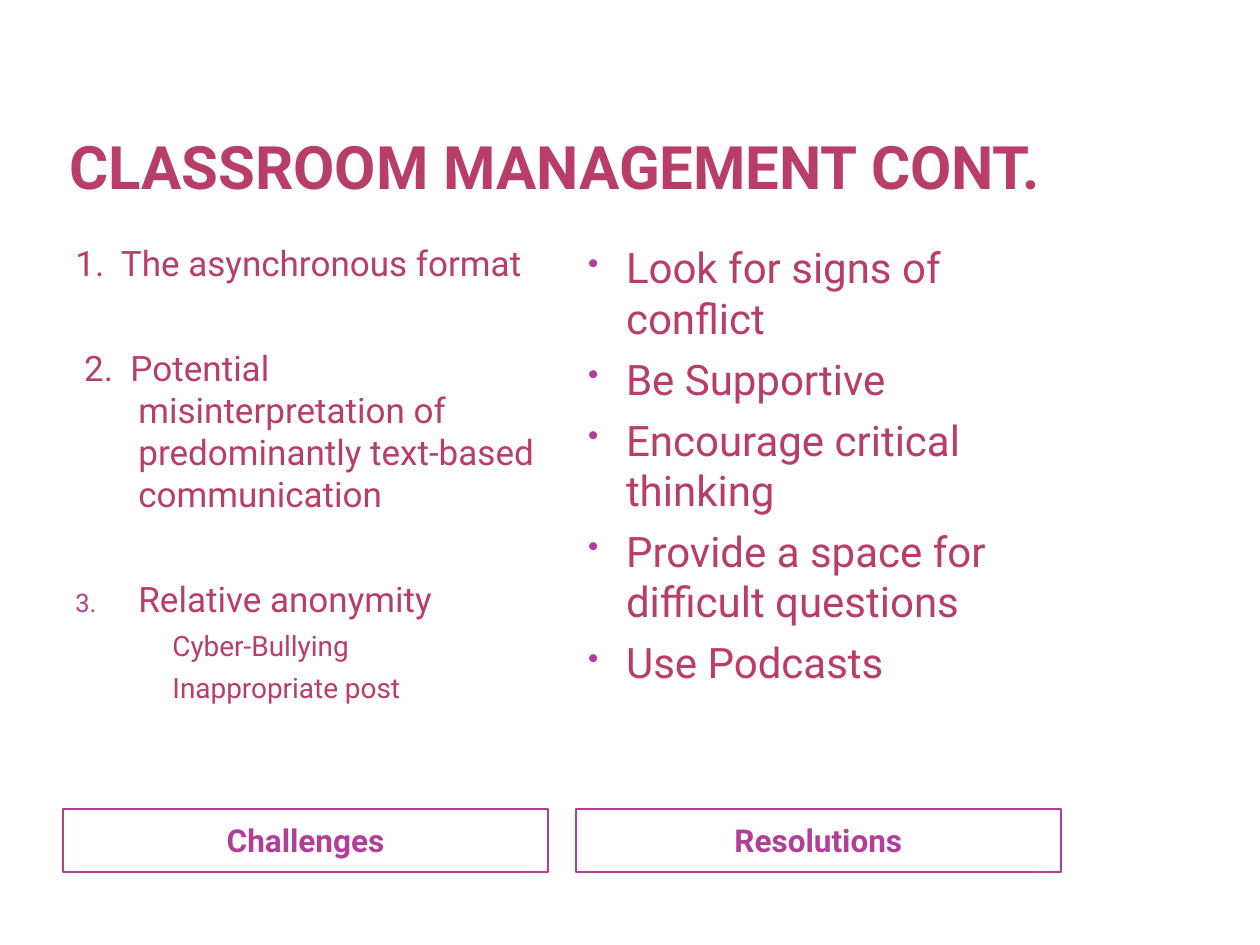
from dataclasses import dataclass

import pptx
import pptx.dml.color
import pptx.enum.shapes
import pptx.enum.text
import pptx.oxml
import pptx.oxml.ns
import pptx.util
from pptx.util import Inches

COLORS = {"rose": "B83D68", "violet": "B13F9A"}
FONT = "Roboto"
COLUMN_LEFTS = (0.5, 4.57)
COLUMN_WIDTH = 3.85


@dataclass
class Item:
    text: str
    size: float
    margin: float = 0
    indent: float = 0
    before: float = 0
    marker: str = ""
    color: str = "rose"
    bold: bool = False
    centered: bool = False


def rgb(name: str) -> pptx.dml.color.RGBColor:
    return pptx.dml.color.RGBColor.from_string(COLORS[name])


def add_marker(properties, marker: str) -> None:
    """Add a violet bullet or number at 73 % of the text size."""
    namespace = pptx.oxml.ns.nsdecls("a")
    for xml in (
        f'<a:buClr {namespace}><a:srgbClr val="{COLORS["violet"]}"/></a:buClr>',
        f'<a:buSzPct {namespace} val="73000"/>',
        marker.format(namespace=namespace),
    ):
        properties.append(pptx.oxml.parse_xml(xml))


def write_items(frame, items: list[Item], **frame_format) -> None:
    for name, value in {"word_wrap": True, **frame_format}.items():
        setattr(frame, name, value)
    for index, item in enumerate(items):
        paragraph = frame.add_paragraph() if index else frame.paragraphs[0]
        properties = paragraph._p.get_or_add_pPr()
        properties.set("marL", str(Inches(item.margin)))
        properties.set("indent", str(Inches(item.indent)))
        if item.marker:
            add_marker(properties, item.marker)
        if index:
            paragraph.space_before = pptx.util.Pt(item.before)
        align = pptx.enum.text.PP_ALIGN
        paragraph.alignment = align.CENTER if item.centered else align.LEFT
        run = paragraph.add_run()
        run.text = item.text
        font_format = {"name": FONT, "size": pptx.util.Pt(item.size), "bold": item.bold}
        for name, value in font_format.items():
            setattr(run.font, name, value)
        run.font.color.rgb = rgb(item.color)


def add_text(slide, left: float, top: float, width: float, height: float,
             items: list[Item], **frame_format) -> None:
    box = slide.shapes.add_textbox(*map(Inches, (left, top, width, height)))
    write_items(box.text_frame, items, **frame_format)


def add_label(slide, left: float, caption: str) -> None:
    label = slide.shapes.add_shape(
        pptx.enum.shapes.MSO_SHAPE.RECTANGLE,
        *map(Inches, (left, 6.42, COLUMN_WIDTH, 0.5)),
    )
    label.shadow.inherit = False
    label.fill.background()
    label.line.color.rgb = rgb("violet")
    label.line.width = pptx.util.Pt(1)
    write_items(
        label.text_frame,
        [Item(caption, 18, color="violet", bold=True, centered=True)],
        vertical_anchor=pptx.enum.text.MSO_ANCHOR.MIDDLE,
    )


BULLET = '<a:buChar {namespace} char="•"/>'
NUMBER_THREE = '<a:buAutoNum {namespace} type="arabicPeriod" startAt="3"/>'

CHALLENGES = [
    Item("1.  The asynchronous format", 20, 0.5, -0.5),
    Item("2.  Potential misinterpretation of predominantly text-based communication",
         20, 0.5, -0.43, before=36),
    Item("Relative anonymity", 20, 0.5, -0.5, before=36, marker=NUMBER_THREE),
    Item("Cyber-Bullying", 16, 0.77, before=5),
    Item("Inappropriate post", 16, 0.77, before=5),
]
RESOLUTIONS = [
    Item(text, 24, 0.3, -0.3, before=6, marker=BULLET)
    for text in (
        "Look for signs of conflict",
        "Be Supportive",
        "Encourage critical thinking",
        "Provide a space for difficult questions",
        "Use Podcasts",
    )
]


def main() -> None:
    deck = pptx.Presentation()
    deck.slide_width, deck.slide_height = Inches(10), Inches(7.5)
    slide = deck.slides.add_slide(deck.slide_layouts[6])

    # Title
    add_text(
        slide, 0.5, 0.35, 7.92, 1.25,
        [Item("CLASSROOM MANAGEMENT CONT.", 34.2, bold=True)],
        vertical_anchor=pptx.enum.text.MSO_ANCHOR.BOTTOM,
        margin_left=Inches(0.05), margin_right=Inches(0.05),
        margin_top=0, margin_bottom=0,
    )

    # Two columns, each with its label below
    columns = (("Challenges", CHALLENGES), ("Resolutions", RESOLUTIONS))
    for left, (caption, items) in zip(COLUMN_LEFTS, columns):
        add_label(slide, left, caption)
        add_text(slide, left, 1.87, COLUMN_WIDTH, 4.5, items)

    deck.save("out.pptx")


if __name__ == "__main__":
    main()
